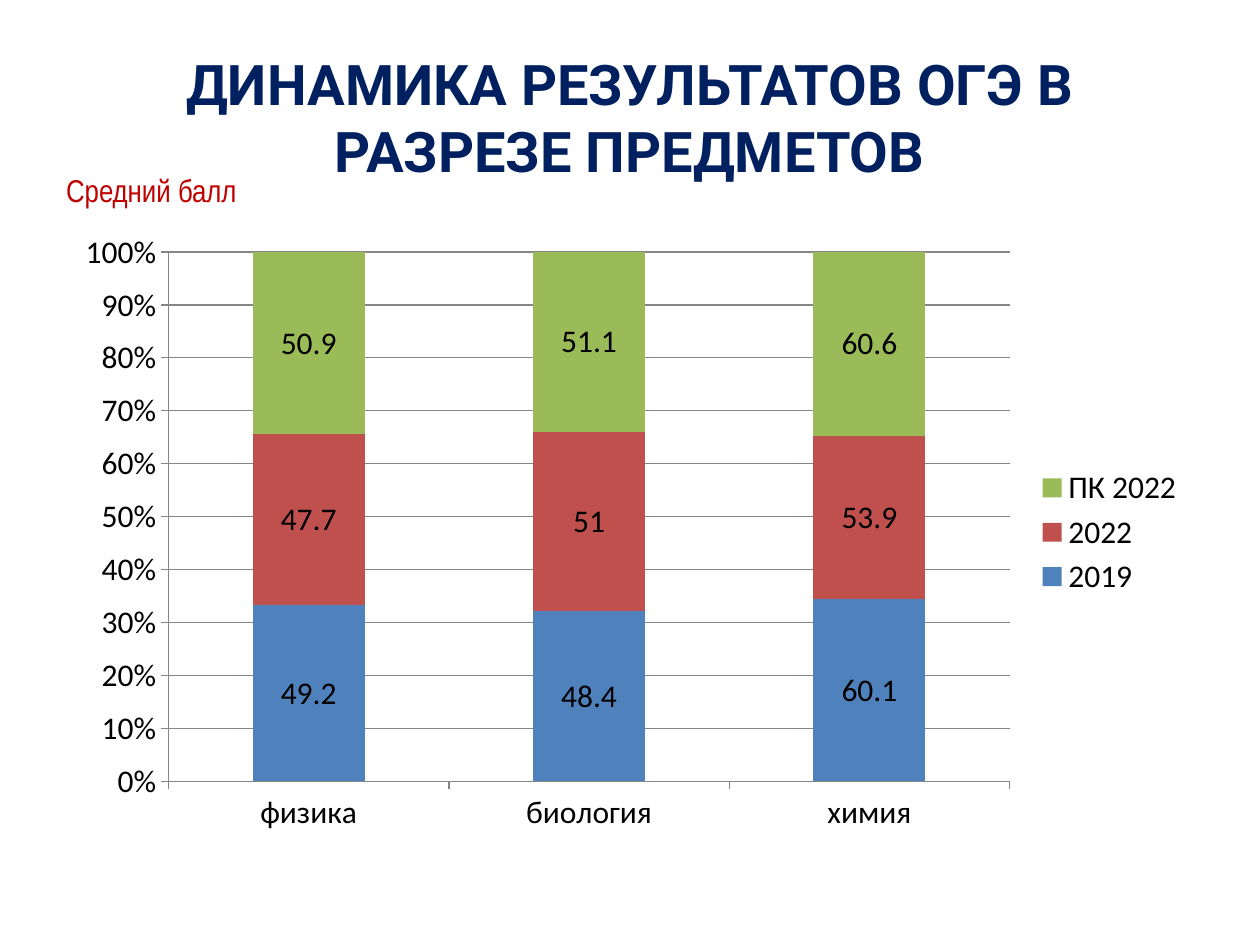
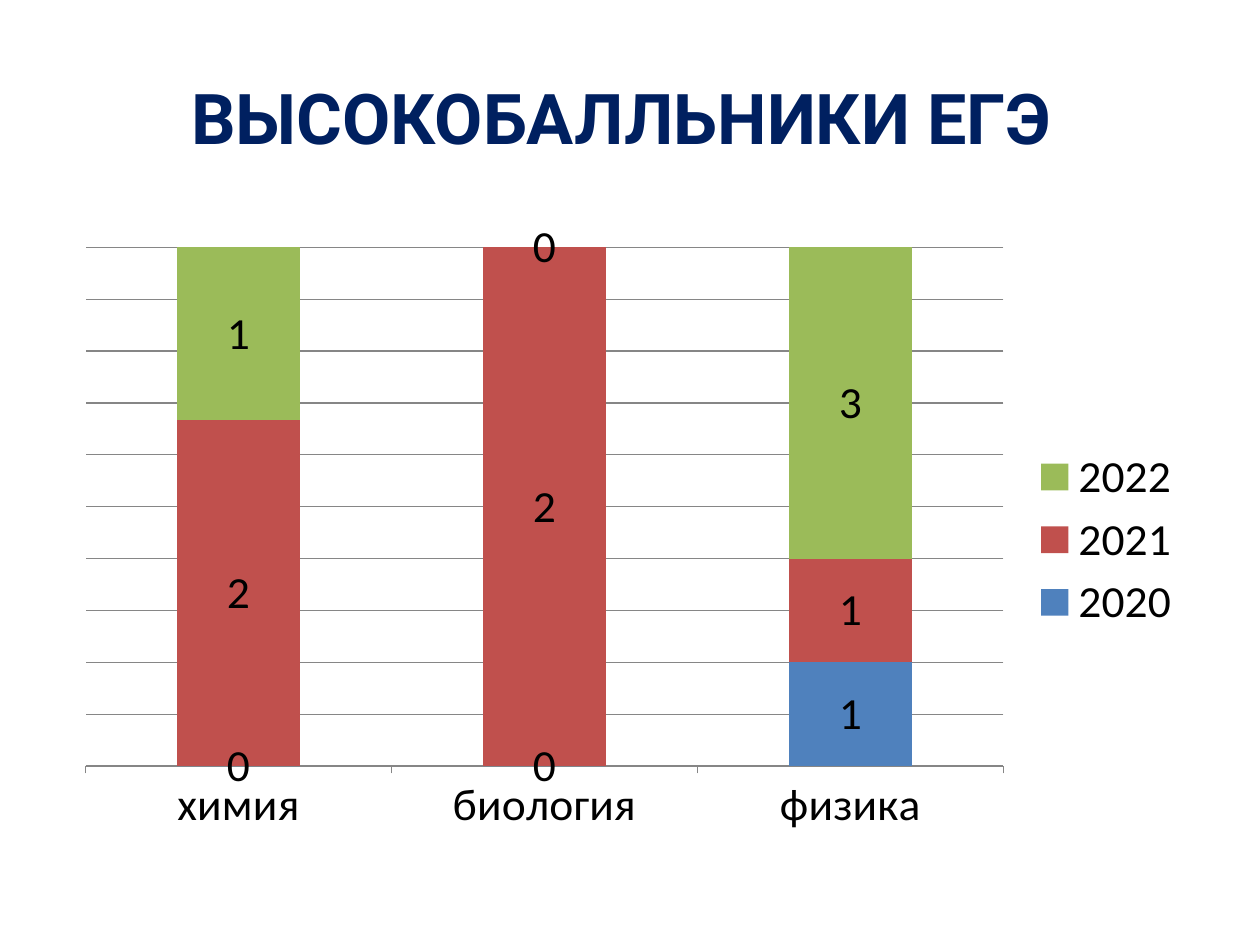
from dataclasses import dataclass

from pptx import Presentation
from pptx.chart.data import CategoryChartData
from pptx.dml.color import RGBColor
from pptx.enum.chart import XL_CHART_TYPE, XL_LABEL_POSITION, XL_LEGEND_POSITION, XL_TICK_MARK
from pptx.enum.text import MSO_ANCHOR, PP_ALIGN
from pptx.slide import Slide
from pptx.util import Inches, Pt

SLIDE_WIDTH = Inches(10)
SLIDE_HEIGHT = Inches(7.5)
NAVY = RGBColor(0x00, 0x20, 0x60)
CRIMSON = RGBColor(0xC0, 0x00, 0x00)
BLACK = RGBColor(0x00, 0x00, 0x00)
GRID_GRAY = RGBColor(0x86, 0x86, 0x86)
YEAR_COLORS = (
    RGBColor(0x4F, 0x81, 0xBD),
    RGBColor(0xC0, 0x50, 0x4D),
    RGBColor(0x9B, 0xBB, 0x59),
)


@dataclass(frozen=True)
class Area:
    left: float
    top: float
    width: float
    height: float

    def lengths(self) -> tuple[int, int, int, int]:
        return (
            int(self.left * SLIDE_WIDTH),
            int(self.top * SLIDE_HEIGHT),
            int(self.width * SLIDE_WIDTH),
            int(self.height * SLIDE_HEIGHT),
        )


@dataclass(frozen=True)
class ExamResults:
    title: str
    title_size: int
    subjects: tuple[str, ...]
    scores: dict[str, tuple[float, ...]]
    font_size: int
    shows_percent: bool
    unit: str = ""


TITLE_AREA = Area(0.05, 0.04, 0.9, 1 / 6)
UNIT_AREA = Area(0.02, 0.17, 0.206, 0.068)
CHART_AREA = Area(0.05, 7 / 30, 0.9, 0.66)

RESULTS = (
    ExamResults(
        title="ДИНАМИКА РЕЗУЛЬТАТОВ ОГЭ В РАЗРЕЗЕ ПРЕДМЕТОВ",
        title_size=32,
        subjects=("физика", "биология", "химия"),
        scores={
            "2019": (49.2, 48.4, 60.1),
            "2022": (47.7, 51, 53.9),
            "ПК 2022": (50.9, 51.1, 60.6),
        },
        font_size=18,
        shows_percent=True,
        unit="Средний балл ",
    ),
    ExamResults(
        title="ВЫСОКОБАЛЛЬНИКИ ЕГЭ ",
        title_size=40,
        subjects=("химия", "биология", "физика"),
        scores={"2020": (0, 0, 1), "2021": (2, 2, 1), "2022": (1, 0, 3)},
        font_size=26,
        shows_percent=False,
    ),
)


def add_text(
    slide: Slide,
    text: str,
    area: Area,
    *,
    size: int,
    font: str,
    color: RGBColor,
    bold: bool = False,
    anchor: MSO_ANCHOR = MSO_ANCHOR.TOP,
    line_spacing: float = 1.0,
) -> None:
    frame = slide.shapes.add_textbox(*area.lengths()).text_frame
    frame.word_wrap = True
    frame.vertical_anchor = anchor
    paragraph = frame.paragraphs[0]
    paragraph.alignment = PP_ALIGN.CENTER
    paragraph.line_spacing = line_spacing
    run = paragraph.add_run()
    run.text = text
    run.font.size = Pt(size)
    run.font.name = font
    run.font.bold = bold
    run.font.color.rgb = color


def add_results_chart(slide: Slide, results: ExamResults) -> None:
    table = CategoryChartData()
    table.categories = results.subjects
    for year, scores in results.scores.items():
        table.add_series(year, scores)
    chart = slide.shapes.add_chart(
        XL_CHART_TYPE.COLUMN_STACKED_100, *CHART_AREA.lengths(), table
    ).chart
    chart.has_title = False
    chart.font.name = "Calibri"
    chart.font.size = Pt(results.font_size)
    chart.font.color.rgb = BLACK

    chart.has_legend = True
    chart.legend.position = XL_LEGEND_POSITION.RIGHT
    chart.legend.include_in_layout = False

    columns = chart.plots[0]
    columns.gap_width = 150
    columns.overlap = 100
    columns.vary_by_categories = False
    for year, color in zip(columns.series, YEAR_COLORS):
        year.format.fill.solid()
        year.format.fill.fore_color.rgb = color
        year.data_labels.show_value = True
        year.data_labels.position = XL_LABEL_POSITION.CENTER

    percent_axis = chart.value_axis
    percent_axis.visible = results.shows_percent
    percent_axis.has_major_gridlines = True
    percent_axis.tick_labels.number_format = "0%"
    percent_axis.tick_labels.number_format_is_linked = False
    chart.category_axis.has_major_gridlines = False
    for axis in (chart.category_axis, percent_axis):
        axis.major_tick_mark = XL_TICK_MARK.OUTSIDE
        axis.minor_tick_mark = XL_TICK_MARK.NONE
    for ruled in (chart.category_axis, percent_axis, percent_axis.major_gridlines):
        ruled.format.line.color.rgb = GRID_GRAY
        ruled.format.line.width = Pt(0.75)


def add_results_slide(presentation: Presentation, results: ExamResults) -> None:
    slide = presentation.slides.add_slide(presentation.slide_layouts[6])
    add_results_chart(slide, results)
    add_text(
        slide,
        results.title,
        TITLE_AREA,
        size=results.title_size,
        font="Roboto",
        color=NAVY,
        bold=True,
        anchor=MSO_ANCHOR.MIDDLE,
    )
    if results.unit:
        add_text(
            slide,
            results.unit,
            UNIT_AREA,
            size=18,
            font="Arial Narrow",
            color=CRIMSON,
            line_spacing=1.1,
        )


def main() -> None:
    presentation = Presentation()
    presentation.slide_width = SLIDE_WIDTH
    presentation.slide_height = SLIDE_HEIGHT
    for results in RESULTS:
        add_results_slide(presentation, results)
    presentation.save("out.pptx")


if __name__ == "__main__":
    main()
